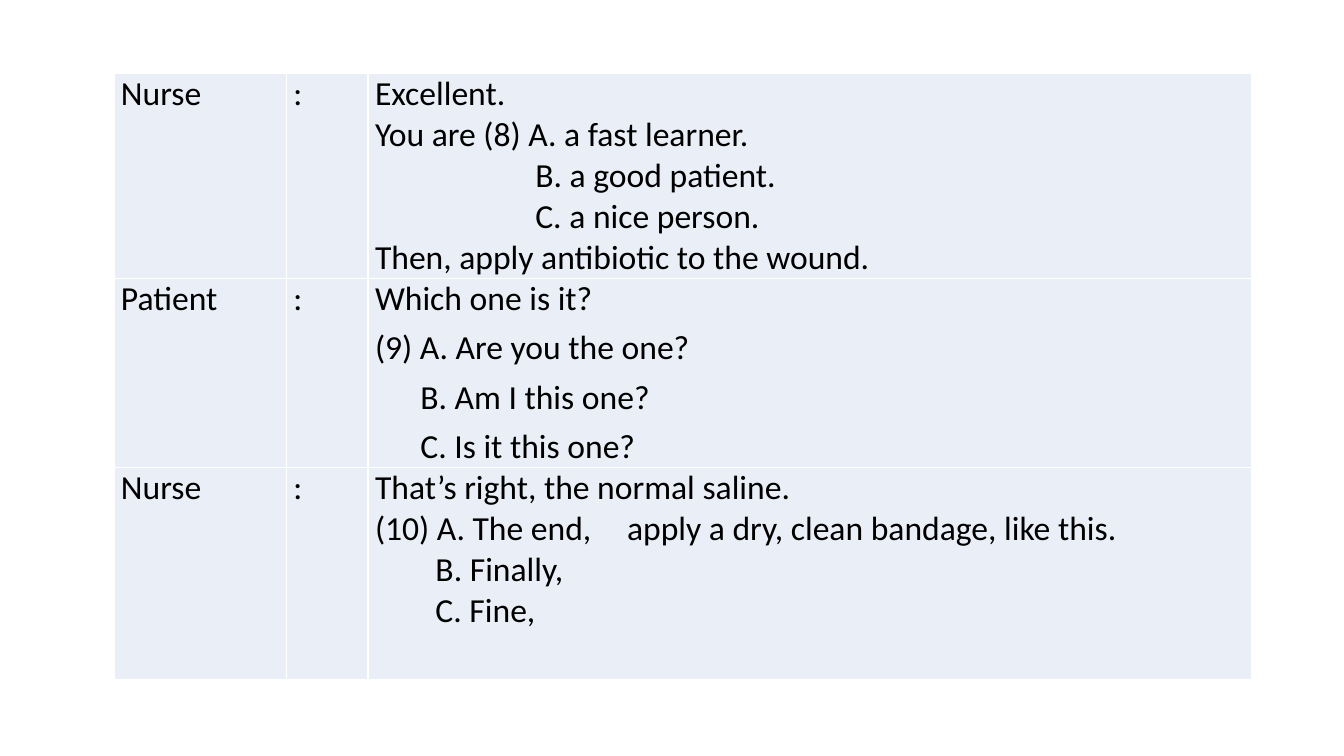
from dataclasses import dataclass

from lxml import etree
from pptx import Presentation
from pptx import util as u
from pptx.dml.color import RGBColor
from pptx.oxml.ns import qn


@dataclass(frozen=True)
class Theme:
    font: str = "Calibri"
    size: int = 24
    ink: str = "000000"
    cell: str = "EAEFF7"
    border: str = "FFFFFF"
    border_width: int = 1
    spacing: int = 3
    side_margin: float = 0.07


class DialogueSlide:
    """Holds the theme and the current slide."""

    def __init__(self, deck, theme):
        self.theme = theme
        self.slide = deck.slides.add_slide(deck.slide_layouts[6])

    def table(self, left, top, widths, heights, turns):
        frame = self.slide.shapes.add_table(
            len(heights), len(widths), u.Inches(left), u.Inches(top),
            u.Inches(sum(widths)), u.Inches(sum(heights)))
        grid = frame.table
        for flag, value in {"first_row": False, "horz_banding": False}.items():
            setattr(grid, flag, value)
        for column, width in zip(grid.columns, widths):
            column.width = u.Inches(width)
        for row, height in zip(grid.rows, heights):
            row.height = u.Inches(height)
        for r, (speaker, spacing, speech) in enumerate(turns):
            self.cell(grid.cell(r, 0), [(speaker, 0)], self.theme.spacing)
            self.cell(grid.cell(r, 1), [(":", 0)], self.theme.spacing)
            self.cell(grid.cell(r, 2), speech, spacing)

    def cell(self, cell, lines, spacing):
        side = u.Inches(self.theme.side_margin)
        margins = {"margin_left": side, "margin_right": side,
                   "margin_top": 0, "margin_bottom": 0}
        for name, value in margins.items():
            setattr(cell, name, value)
        self.borders(cell)
        cell.fill.solid()
        cell.fill.fore_color.rgb = RGBColor.from_string(self.theme.cell)
        for i, (line, indent) in enumerate(lines):
            frame = cell.text_frame
            paragraph = frame.paragraphs[0] if i == 0 else frame.add_paragraph()
            self.line(paragraph, line, indent, spacing)

    def line(self, paragraph, line, indent, spacing):
        for name in ("space_before", "space_after"):
            setattr(paragraph, name, u.Pt(spacing))
        properties = paragraph._p.get_or_add_pPr()
        properties.set("marL", str(u.Inches(indent)))
        properties.set("indent", "0")
        if "\t" in line:
            stops = etree.SubElement(properties, qn("a:tabLst"))
            etree.SubElement(stops, qn("a:tab"),
                             pos=str(u.Inches(ENDING_TAB)), algn="l")
        run = paragraph.add_run()
        run.text = line
        for name, value in {"name": self.theme.font,
                            "size": u.Pt(self.theme.size)}.items():
            setattr(run.font, name, value)
        run.font.color.rgb = RGBColor.from_string(self.theme.ink)

    def borders(self, cell):
        properties = cell._tc.get_or_add_tcPr()
        for side in ("lnL", "lnR", "lnT", "lnB"):
            edge = etree.SubElement(properties, qn(f"a:{side}"),
                                    w=str(u.Pt(self.theme.border_width)))
            fill = etree.SubElement(edge, qn("a:solidFill"))
            etree.SubElement(fill, qn("a:srgbClr"), val=self.theme.border)


# Indents that line up the answer options, and the tab before the shared ending
LEARNER_INDENT, WHICH_INDENT, FINALLY_INDENT = 1.59, 0.45, 0.6
ENDING_TAB = 3.58

# Speaker, paragraph spacing in points, lines with their indents
TURNS = [
    ("Nurse", 0, [
        ("Excellent.", 0),
        ("You are (8) A. a fast learner.", 0),
        ("B. a good patient.", LEARNER_INDENT),
        ("C. a nice person.", LEARNER_INDENT),
        ("Then, apply antibiotic to the wound.", 0),
    ]),
    ("Patient", Theme.spacing, [
        ("Which one is it?", 0),
        ("(9) A. Are you the one?", 0),
        ("B. Am I this one?", WHICH_INDENT),
        ("C. Is it this one?", WHICH_INDENT),
    ]),
    ("Nurse", 0, [
        ("That’s right, the normal saline.", 0),
        ("(10) A. The end,\tapply a dry, clean bandage, like this.", 0),
        ("B. Finally,", FINALLY_INDENT),
        ("C. Fine,", FINALLY_INDENT),
    ]),
]


def main():
    deck = Presentation()
    deck.slide_width, deck.slide_height = u.Inches(13.33), u.Inches(7.5)

    # Dialogue table
    dialogue = DialogueSlide(deck, Theme())
    dialogue.table(1.13, 0.73, widths=[1.71, 0.81, 8.76],
                   heights=[2.03, 1.86, 2.1], turns=TURNS)
    deck.save("out.pptx")


if __name__ == "__main__":
    main()
